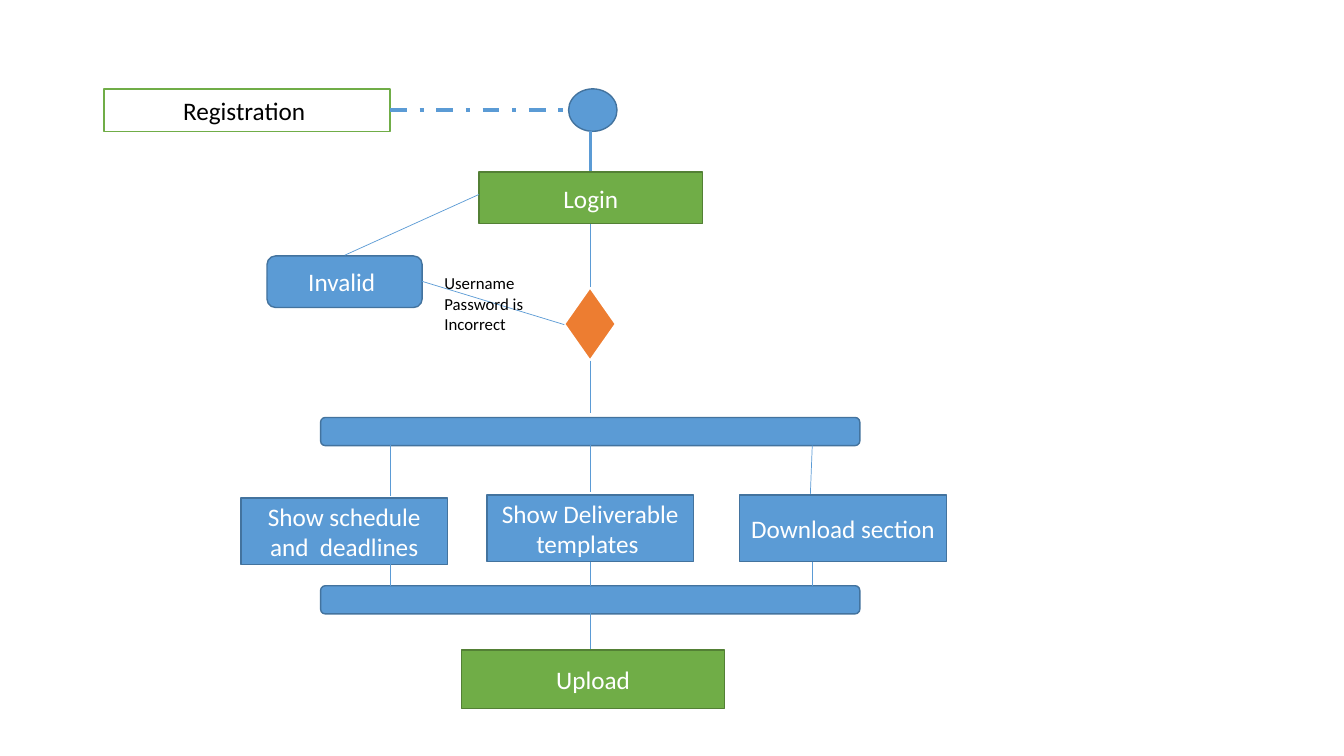
from lxml import etree
from pptx import Presentation
from pptx import util as u
from pptx.dml.color import RGBColor
from pptx.enum import dml, shapes, text
from pptx.oxml.ns import qn

COLORS = {
    "white": "FFFFFF", "black": "000000",
    "blue": "5B9BD5", "blue_edge": "43739E",
    "green": "70AD47", "green_edge": "538035",
    "orange": "ED7D31",
}
KIND = shapes.MSO_SHAPE


class FlowChart:
    font = "Calibri"

    def __init__(self, slide):
        self.slide = slide

    def color(self, name):
        return RGBColor.from_string(COLORS[name])

    def style_text(self, paragraph, size, color):
        paragraph.font.name = self.font
        paragraph.font.size = u.Pt(size)
        paragraph.font.color.rgb = self.color(color)

    def node(self, kind, left, top, width, height, label="",
             fill="blue", edge="blue_edge", ink="white", weight=1):
        box = self.slide.shapes.add_shape(
            kind, u.Cm(left), u.Cm(top), u.Cm(width), u.Cm(height))
        box.shadow.inherit = False
        box.fill.solid()
        box.fill.fore_color.rgb = self.color(fill)
        box.line.color.rgb = self.color(edge)
        box.line.width = u.Pt(weight)
        if label:
            frame = box.text_frame
            frame.vertical_anchor = text.MSO_ANCHOR.MIDDLE
            frame.text = label
            frame.paragraphs[0].alignment = text.PP_ALIGN.CENTER
            self.style_text(frame.paragraphs[0], 18, ink)

    def link(self, x1, y1, x2, y2, weight=0.5, dash=None):
        line = self.slide.shapes.add_connector(
            shapes.MSO_CONNECTOR.STRAIGHT, u.Cm(x1), u.Cm(y1), u.Cm(x2), u.Cm(y2))
        line.line.color.rgb = self.color("blue")
        line.line.width = u.Pt(weight)
        if dash:
            line.line.dash_style = dash
        etree.SubElement(line._element.spPr, qn("a:effectLst"))

    def note(self, left, top, width, height, lines):
        frame = self.slide.shapes.add_textbox(
            u.Cm(left), u.Cm(top), u.Cm(width), u.Cm(height)).text_frame
        frame.word_wrap = False
        frame.auto_size = text.MSO_AUTO_SIZE.SHAPE_TO_FIT_TEXT
        frame.text = "\n".join(lines)
        for paragraph in frame.paragraphs:
            self.style_text(paragraph, 12, "black")


def main():
    prs = Presentation()
    prs.slide_width, prs.slide_height = u.Cm(33.87), u.Cm(19.05)
    chart = FlowChart(prs.slides.add_slide(prs.slide_layouts[6]))
    axis = 14.88

    # Start and registration
    chart.node(KIND.RECTANGLE, 2.62, 2.24, 7.21, 1.07, "Registration ",
               fill="white", edge="green", ink="black")
    chart.node(KIND.OVAL, 14.33, 2.24, 1.22, 1.07)
    chart.link(9.83, 2.77, 14.33, 2.77, 3, dml.MSO_LINE.DASH_DOT)
    chart.link(axis, 3.3, axis, 4.34, 2.25)

    # Login check
    chart.node(KIND.RECTANGLE, 12.07, 4.34, 5.64, 1.3, "Login",
               fill="green", edge="green_edge")
    chart.node(KIND.DIAMOND, 14.22, 7.24, 1.3, 1.85,
               fill="orange", edge="white", weight=1.5)
    chart.link(axis, 5.64, axis, 7.24)
    chart.node(KIND.ROUNDED_RECTANGLE, 6.73, 6.45, 3.91, 1.3, "Invalid ")
    chart.link(14.22, 8.18, 10.64, 7.09)
    chart.link(8.69, 6.43, 12.07, 4.9)
    chart.note(10.95, 6.76, 2.51, 1.8, ["Username", "Password is", "Incorrect"])
    chart.link(axis, 9.09, axis, 10.41)

    # Fork and join bars
    for bar_top in (10.52, 14.76):
        chart.node(KIND.ROUNDED_RECTANGLE, 8.08, bar_top, 13.59, 0.71)

    # Parallel sections: label, box left and top, link x, link ends
    sections = [
        ("Show schedule and  deadlines", 6.07, 12.55, 9.83, 9.83, 12.5, 14.22),
        ("Show Deliverable templates ", 12.27, 12.47, axis, axis, 12.4, 14.15),
        ("Download section ", 18.64, 12.47, 20.47, 20.42, 12.5, 14.15),
    ]
    for label, left, top, x, entry_x, entry_y, exit_y in sections:
        chart.link(x, 11.22, entry_x, entry_y)
        chart.node(KIND.RECTANGLE, left, top, 5.21, 1.68, label)
        chart.link(x, 14.76, x, exit_y)

    # Upload
    chart.link(axis, 15.44, axis, 16.38)
    chart.node(KIND.RECTANGLE, 11.63, 16.38, 6.63, 1.47, "Upload",
               fill="green", edge="green_edge")

    prs.save("out.pptx")


if __name__ == "__main__":
    main()
